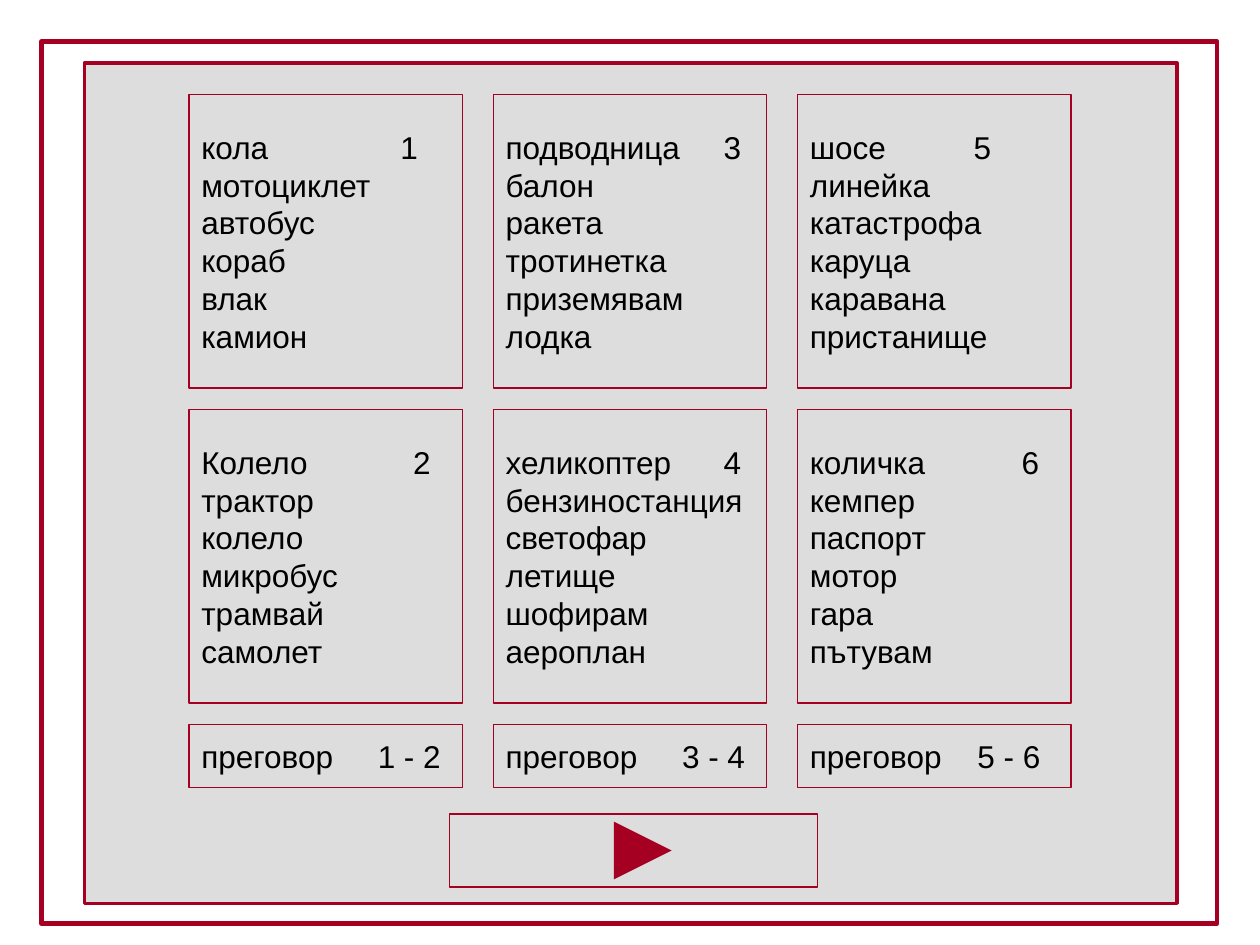
from lxml.etree import SubElement as Sub
from pptx import Presentation
from pptx.dml.color import RGBColor as RGB
from pptx.enum.shapes import MSO_CONNECTOR as Conn, MSO_SHAPE as Kind
from pptx.enum.text import MSO_ANCHOR as Anchor, PP_ALIGN as Align
from pptx.oxml.ns import qn
from pptx.util import Inches, Pt

CARDS = [
    [("кола\t1", 1.58, ["мотоциклет", "автобус", "кораб", "влак", "камион"]),
     ("подводница\t3", 1.73, ["балон", "ракета", "тротинетка", "приземявам", "лодка"]),
     ("шосе\t5", 1.3, ["линейка", "катастрофа", "каруца", "каравана", "пристанище"])],
    [("Колело\t2", 1.68, ["трактор", "колело", "микробус", "трамвай", "самолет"]),
     ("хеликоптер\t4", 1.73, ["бензиностанция", "светофар", "летище", "шофирам", "аероплан"]),
     ("количка\t6", 1.68, ["кемпер", "паспорт", "мотор", "гара", "пътувам"])],
    [("преговор\t1 - 2", 1.4, []),
     ("преговор\t3 - 4", 1.4, []),
     ("преговор\t5 - 6", 1.33, [])],
]
THEME = {
    "red": RGB.from_string("A50021"),
    "gray": RGB.from_string("DDDDDD"),
    "font": {"name": "Arial", "size": Pt(18)},
    "ink": RGB.from_string("000000"),
    "thin": 0.75,
}
BODY = {"word_wrap": True, "vertical_anchor": Anchor.MIDDLE}
LEFT, TOP, WIDE, STEP, GAP = 1.5, 0.75, 2.17, 2.415, 0.17
HIGH = [2.33, 2.33, 0.5]


def put(obj, vals):
    for key, val in vals.items():
        setattr(obj, key, val)


def frame(slide, box, width, fill=None):
    shape = slide.shapes.add_shape(Kind.RECTANGLE, *map(Inches, box))
    shape.shadow.inherit = False
    if fill is None:
        shape.fill.background()
    else:
        shape.fill.solid()
        shape.fill.fore_color.rgb = fill
    shape.line.color.rgb = THEME["red"]
    shape.line.width = Pt(width)
    return shape


def card(slide, box, head, tab, words):
    text = frame(slide, box, THEME["thin"]).text_frame
    put(text, BODY)
    text.text = "\n".join([head, *words])
    props = text.paragraphs[0]._p.get_or_add_pPr()
    stops = Sub(props, qn("a:tabLst"))
    Sub(stops, qn("a:tab"), pos=str(Inches(tab)), algn="l")
    for para in text.paragraphs:
        para.alignment = Align.LEFT
        put(para.font, THEME["font"])
        para.font.color.rgb = THEME["ink"]


def arrow(slide, start, end, y):
    line = slide.shapes.add_connector(
        Conn.STRAIGHT, *map(Inches, (start, y, end, y)))
    line.line.color.rgb = THEME["red"]
    line.line.width = Pt(11)
    Sub(line.line._get_or_add_ln(), qn("a:tailEnd"), type="triangle")
    Sub(line._element.spPr, qn("a:effectLst"))


def main():
    deck = Presentation()
    put(deck, {"slide_width": Inches(10), "slide_height": Inches(7.5)})
    slide = deck.slides.add_slide(deck.slide_layouts[6])
    frame(slide, (0.33, 0.33, 9.33, 7), 2.5)
    frame(slide, (0.67, 0.5, 8.67, 6.67), 2, THEME["gray"])
    top = TOP
    for row, high in zip(CARDS, HIGH):
        for col, item in enumerate(row):
            card(slide, (LEFT + col * STEP, top, WIDE, high), *item)
        top += high + GAP
    arrow(slide, 4.92, 5.33, 6.75)
    frame(slide, (3.57, 6.46, 2.92, 0.58), THEME["thin"])
    deck.save("out.pptx")


if __name__ == "__main__":
    main()
